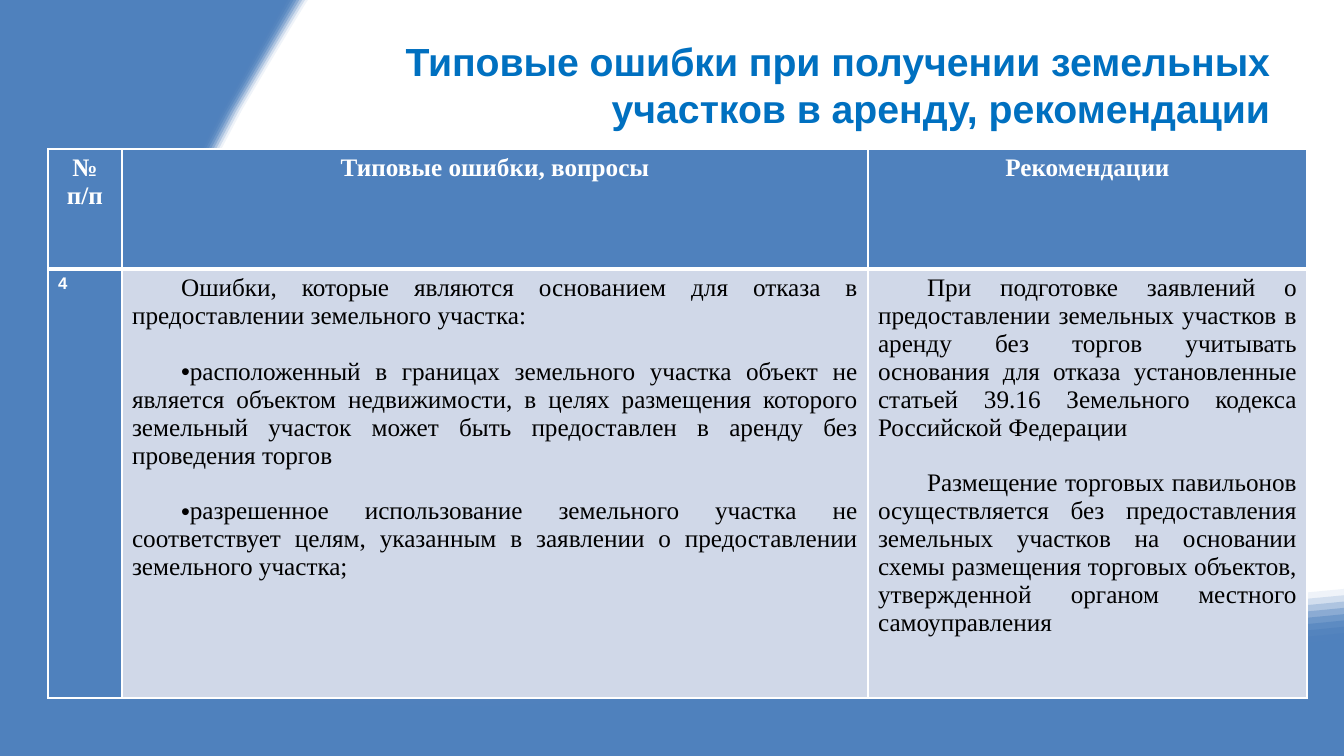
import lxml.etree
import pptx
import pptx.dml.color
import pptx.enum.text
import pptx.oxml.ns
import pptx.util

SLIDE_W, SLIDE_H = 1344, 756
SCALE = 12192000 / SLIDE_W
COLORS = {"blue": "4F81BD", "title": "0070C0", "body": "D0D8E8",
          "white": "FFFFFF", "black": "000000"}
ALIGN = pptx.enum.text.PP_ALIGN
SERIF = "Times New Roman"
BAND_COUNT = 11
PARAGRAPH_INDENT = 49
BLANK_LINE = 20

# Edges of the swoosh: cubic curves running from the right side to the top
BASE_EDGE = [(1344, 661), (1344, 661), (1084, 687), (660, 720), (107, 761),
             (-163, 718), (198, 116), (242, 41), (267, 0), (267, 0)]
WIDEST_EDGE = [(1344, 589), (1342, 589), (1094, 614), (696, 643), (162, 683),
               (-74, 637), (242, 110), (283, 40), (307, 1), (308, 0)]
NARROWEST_EDGE = [(1344, 652), (1309, 656), (1056, 680), (669, 710), (123, 751),
                  (-143, 709), (213, 115), (250, 52), (273, 11), (279, 0)]

TITLE = "Типовые ошибки при получении земельных участков в аренду, рекомендации"
HEADINGS = ["№ п/п", "Типовые ошибки, вопросы", "Рекомендации"]
ERRORS = [
    ("Ошибки, которые являются основанием для отказа в предоставлении земельного участка:", False),
    ("расположенный в границах земельного участка объект не является объектом недвижимости, "
     "в целях размещения которого земельный участок может быть предоставлен в аренду "
     "без проведения торгов", True),
    ("разрешенное использование земельного участка не соответствует целям, указанным "
     "в заявлении о предоставлении земельного участка;", True),
]
ADVICE = [
    ("При подготовке заявлений о предоставлении земельных участков в аренду без торгов "
     "учитывать основания для отказа установленные статьей 39.16 Земельного кодекса "
     "Российской Федерации", False),
    ("Размещение торговых павильонов осуществляется без предоставления земельных участков "
     "на основании схемы размещения торговых объектов, утвержденной органом местного "
     "самоуправления", False),
]


def px(length):
    return pptx.util.Emu(round(length * SCALE))


def rgb(name):
    return pptx.dml.color.RGBColor.from_string(COLORS[name])


def add_element(parent, tag, **attributes):
    return lxml.etree.SubElement(parent, pptx.oxml.ns.qn(tag), attributes)


def add_run(paragraph, text, size, font, color, bold):
    run = paragraph.add_run()
    run.text = text
    run.font.size = pptx.util.Pt(size)
    run.font.name = font
    run.font.bold = bold
    run.font.color.rgb = rgb(color)


# Background swoosh
def trace_edge(controls, steps=8):
    points = [controls[0]]
    for first in range(0, len(controls) - 1, 3):
        curve = controls[first:first + 4]
        for step in range(1, steps + 1):
            t = step / steps
            weights = ((1 - t) ** 3, 3 * t * (1 - t) ** 2, 3 * t * t * (1 - t), t ** 3)
            points.append(tuple(sum(w * point[axis] for w, point in zip(weights, curve))
                                for axis in (0, 1)))
    return points


def add_region(slide, outline, opacity):
    vertices = [(px(x), px(y)) for x, y in outline]
    builder = slide.shapes.build_freeform(*vertices[0])
    builder.add_line_segments(vertices[1:], close=True)
    region = builder.convert_to_shape()
    region.shadow.inherit = False
    region.fill.solid()
    region.fill.fore_color.rgb = rgb("blue")
    region.line.fill.background()
    if opacity < 1:
        fill_color = next(region.element.spPr.iter(pptx.oxml.ns.qn("a:srgbClr")))
        add_element(fill_color, "a:alpha", val=str(round(opacity * 100000)))


def draw_swoosh(slide, left, top, width, height):
    corners = [(0, 0), (0, height), (width, height)]
    layers = [(BASE_EDGE, 1)]
    for band in range(1, BAND_COUNT + 1):
        share = (band - 1) / (BAND_COUNT - 1)
        edge = [tuple(a + (b - a) * share for a, b in zip(wide, narrow))
                for wide, narrow in zip(WIDEST_EDGE, NARROWEST_EDGE)]
        layers.append((edge, band / BAND_COUNT))
    for edge, opacity in layers:
        outline = [(left + x, top + y) for x, y in trace_edge(edge) + corners]
        add_region(slide, outline, opacity)


# Title
def draw_title(slide, left, top, width, height):
    title = slide.shapes.add_textbox(px(left), px(top), px(width), px(height))
    frame = title.text_frame
    frame.word_wrap = True
    frame.vertical_anchor = pptx.enum.text.MSO_ANCHOR.MIDDLE
    paragraph = frame.paragraphs[0]
    paragraph.alignment = ALIGN.RIGHT
    add_run(paragraph, TITLE, 28, "Arial", "title", True)


# Table of errors and recommendations
def style_cell(cell, fill, top_width, bottom_width):
    properties = cell._tc.get_or_add_tcPr()
    widths = {"a:lnL": 1, "a:lnR": 1, "a:lnT": top_width, "a:lnB": bottom_width}
    for tag, width in widths.items():
        border = add_element(properties, tag, w=str(pptx.util.Pt(width)))
        add_element(add_element(border, "a:solidFill"), "a:srgbClr", val=COLORS["white"])
    cell.fill.solid()
    cell.fill.fore_color.rgb = rgb(fill)


def fill_body_cell(cell, items):
    frame = cell.text_frame
    for index, (text, bulleted) in enumerate(items):
        paragraph = frame.add_paragraph() if index else frame.paragraphs[0]
        paragraph.alignment = ALIGN.JUSTIFY
        if index:
            paragraph.space_before = pptx.util.Pt(BLANK_LINE)
        properties = paragraph._p.get_or_add_pPr()
        properties.set("marL", "0")
        properties.set("indent", str(px(PARAGRAPH_INDENT)))
        if bulleted:
            add_element(properties, "a:buFont", typeface="Arial")
            add_element(properties, "a:buChar", char="•")
        add_run(paragraph, text, 18, SERIF, "black", False)


def draw_table(slide, left, top, width, height):
    number_width, advice_width, header_height = 74, 439, 120
    column_widths = [number_width, width - number_width - advice_width, advice_width]
    table = slide.shapes.add_table(2, 3, px(left), px(top), px(width), px(height)).table
    table.horz_banding = False
    for column, column_width in zip(table.columns, column_widths):
        column.width = px(column_width)
    for row, row_height in zip(table.rows, (header_height, height - header_height)):
        row.height = px(row_height)

    for column, heading in enumerate(HEADINGS):
        header = table.cell(0, column)
        style_cell(header, "blue", 1, 3)
        style_cell(table.cell(1, column), "body" if column else "blue", 3, 1)
        paragraph = header.text_frame.paragraphs[0]
        paragraph.alignment = ALIGN.CENTER
        add_run(paragraph, heading, 18, SERIF, "white", True)

    number = table.cell(1, 0).text_frame.paragraphs[0]
    add_run(number, "4", 12, "Arial", "white", True)
    fill_body_cell(table.cell(1, 1), ERRORS)
    fill_body_cell(table.cell(1, 2), ADVICE)


def main():
    presentation = pptx.Presentation()
    presentation.slide_width = px(SLIDE_W)
    presentation.slide_height = px(SLIDE_H)
    slide = presentation.slides.add_slide(presentation.slide_layouts[6])
    draw_swoosh(slide, 0, 0, SLIDE_W, SLIDE_H)
    draw_title(slide, 248, 21, 1032, 126)
    draw_table(slide, 48, 149, 1259, 549)
    presentation.save("out.pptx")


if __name__ == "__main__":
    main()
